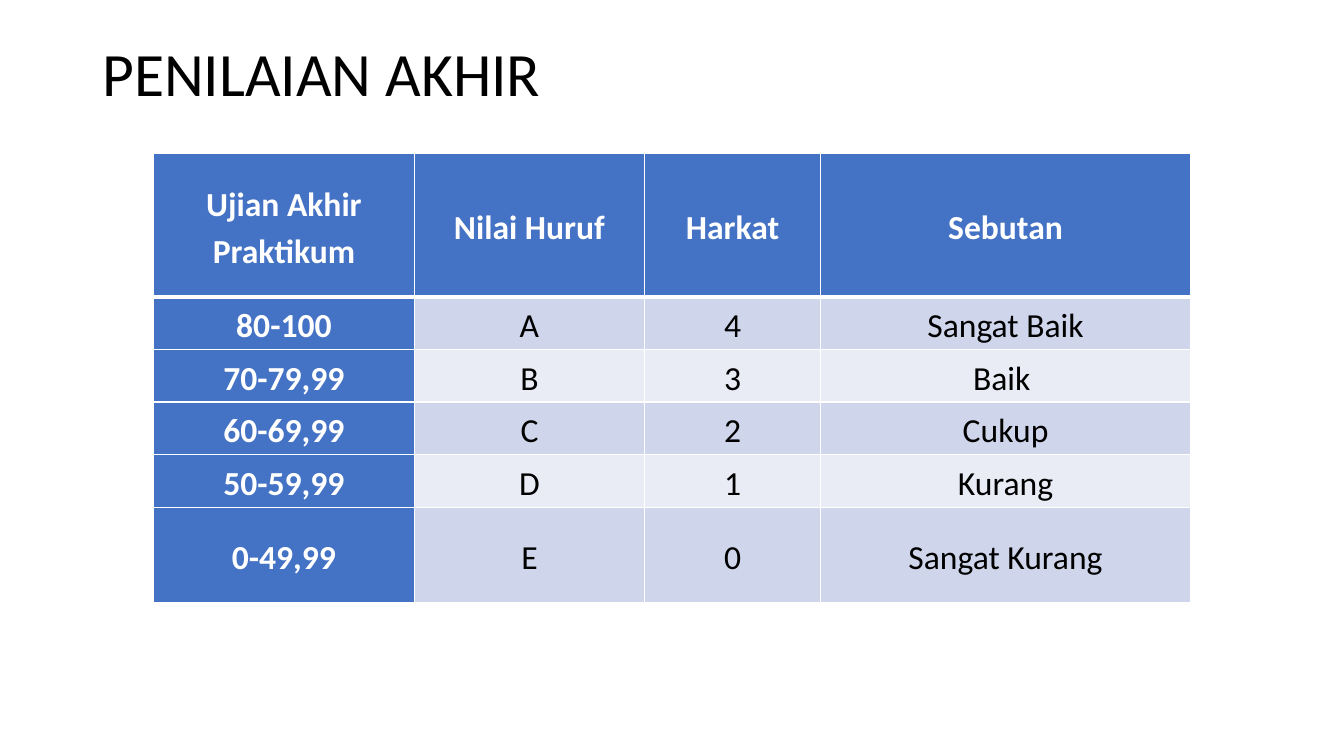
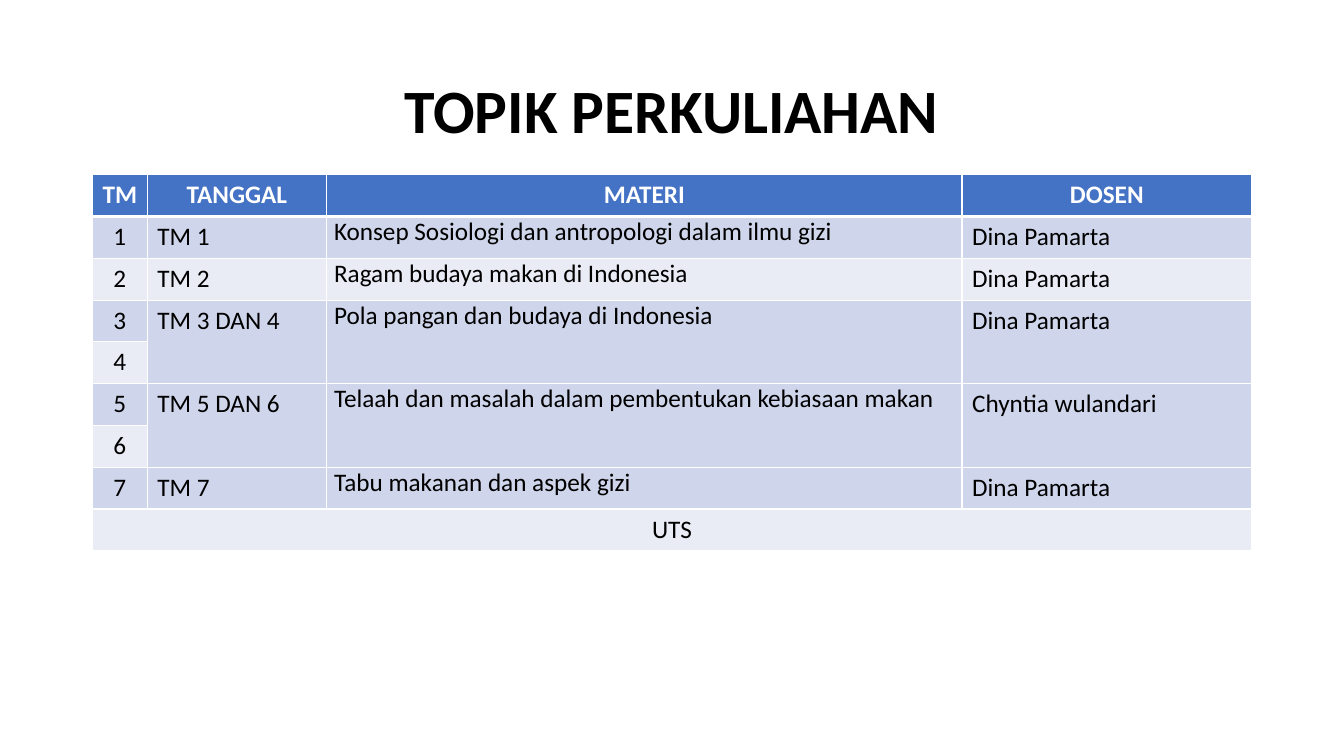
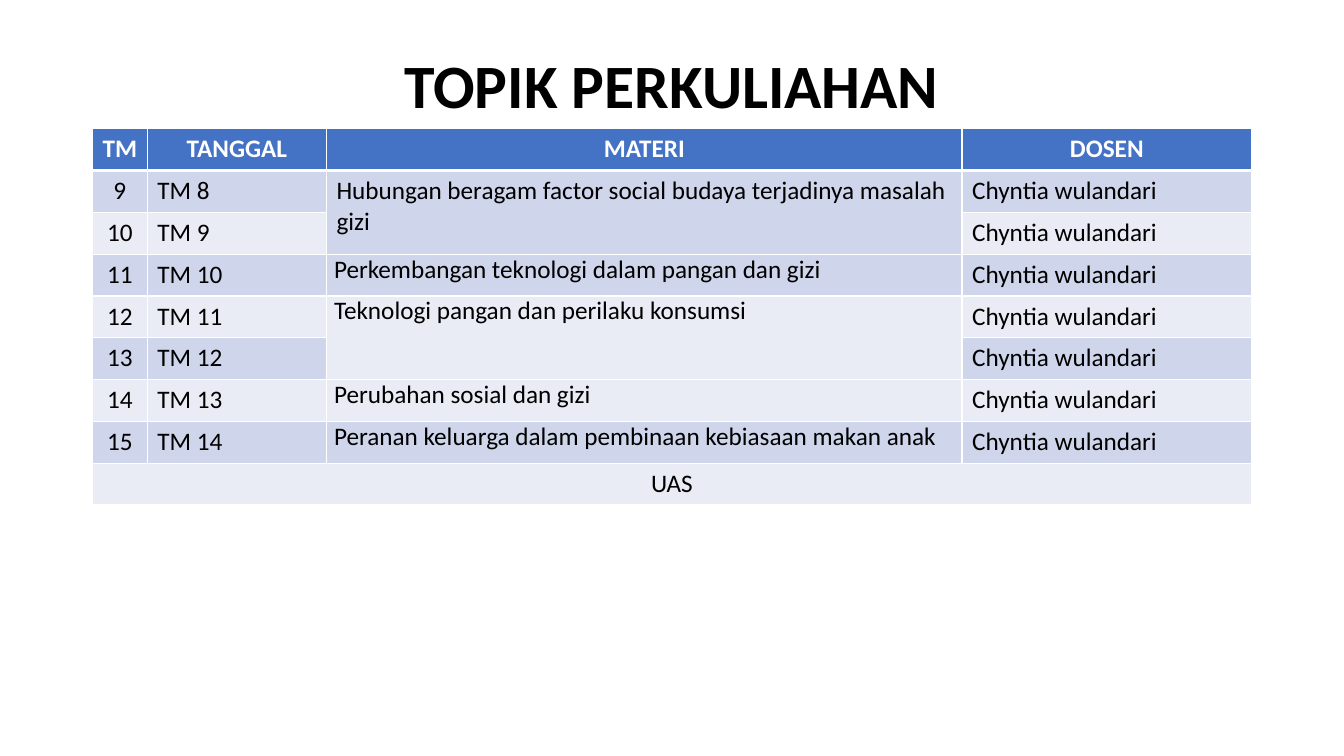
from dataclasses import dataclass
from typing import Optional

from lxml.etree import SubElement
from pptx import Presentation
from pptx.dml.color import RGBColor
from pptx.enum.text import MSO_ANCHOR, PP_ALIGN
from pptx.oxml.ns import qn
from pptx.util import Pt

FONT = "Calibri"
BLACK = "000000"
WHITE = "FFFFFF"
BLUE = "4472C4"
BANDS = ("CFD5EA", "E9EBF5")
BLANK_LAYOUT = 6

Row = tuple[Optional[str], ...]


@dataclass(frozen=True)
class TableStyle:
    column_widths: tuple[float, ...]
    alignments: tuple[PP_ALIGN, ...]
    tight_columns: tuple[int, ...]
    font_size: float
    line_spacing: float
    anchor: MSO_ANCHOR
    header_column: bool


@dataclass(frozen=True)
class TableSlide:
    """A title over a table; a None cell joins the cell above, a lone cell fills its row."""
    title: str
    title_top: float
    title_alignment: PP_ALIGN
    title_bold: bool
    table_left: float
    table_top: float
    row_heights: tuple[float, ...]
    style: TableStyle
    rows: tuple[Row, ...]
    roomy_cells: tuple[tuple[int, int], ...] = ()


GRADE_STYLE = TableStyle(
    column_widths=(186.5, 164.2, 126, 264),
    alignments=(PP_ALIGN.CENTER,) * 4,
    tight_columns=(0, 1, 2, 3),
    font_size=24,
    line_spacing=1.15,
    anchor=MSO_ANCHOR.MIDDLE,
    header_column=True,
)
TOPIC_STYLE = TableStyle(
    column_widths=(39.24, 128, 454, 206.76),
    alignments=(PP_ALIGN.CENTER, PP_ALIGN.LEFT, PP_ALIGN.LEFT, PP_ALIGN.LEFT),
    tight_columns=(2,),
    font_size=18,
    line_spacing=1,
    anchor=MSO_ANCHOR.TOP,
    header_column=False,
)
TOPIC_HEADER = ("TM", "TANGGAL", "MATERI", "DOSEN")
TOPIC_ROW_HEIGHTS = (29.85,) * 9
DINA = "Dina Pamarta"
CHYNTIA = "Chyntia wulandari"

SLIDES = (
    TableSlide(
        "PENILAIAN AKHIR", 2.4, PP_ALIGN.LEFT, False, 109.6, 109.6,
        (102.4, 37.6, 37.6, 37.6, 37.6, 68.4), GRADE_STYLE,
        (
            ("Ujian Akhir Praktikum", "Nilai Huruf", "Harkat", "Sebutan"),
            ("80-100", "A", "4", "Sangat Baik"),
            ("70-79,99", "B", "3", "Baik "),
            ("60-69,99", "C", "2", "Cukup"),
            ("50-59,99", "D", "1", "Kurang"),
            ("0-49,99", "E", "0", "Sangat Kurang"),
        ),
    ),
    TableSlide(
        "TOPIK PERKULIAHAN", 28.6, PP_ALIGN.CENTER, True, 66, 124.8,
        TOPIC_ROW_HEIGHTS, TOPIC_STYLE,
        (
            TOPIC_HEADER,
            ("1", "TM 1", "Konsep Sosiologi dan antropologi dalam ilmu gizi", DINA),
            ("2", "TM 2", "Ragam budaya makan di Indonesia", DINA),
            ("3", "TM 3 DAN 4", "Pola pangan dan budaya di Indonesia", DINA),
            ("4", None, None, None),
            ("5", "TM 5 DAN 6", "Telaah dan masalah dalam pembentukan kebiasaan makan", CHYNTIA),
            ("6", None, None, None),
            ("7", "TM 7", "Tabu makanan dan aspek gizi", DINA),
            ("UTS",),
        ),
    ),
    TableSlide(
        "TOPIK PERKULIAHAN", 11.2, PP_ALIGN.CENTER, True, 66, 92,
        TOPIC_ROW_HEIGHTS, TOPIC_STYLE,
        (
            TOPIC_HEADER,
            ("9", "TM 8", "Hubungan beragam factor social budaya terjadinya masalah gizi", CHYNTIA),
            ("10", "TM 9", None, CHYNTIA),
            ("11", "TM 10", "Perkembangan teknologi dalam pangan dan gizi", CHYNTIA),
            ("12", "TM 11", "Teknologi pangan dan perilaku konsumsi", CHYNTIA),
            ("13", "TM 12", None, CHYNTIA),
            ("14", "TM 13", "Perubahan sosial dan gizi", CHYNTIA),
            ("15", "TM 14", "Peranan keluarga dalam pembinaan kebiasaan makan anak", CHYNTIA),
            ("UAS",),
        ),
        roomy_cells=((1, 2),),
    ),
)


def color(value: str) -> RGBColor:
    return RGBColor.from_string(value)


def write(paragraph, text: str, size: float, text_color: str, bold: bool,
          alignment: PP_ALIGN, line_spacing: float) -> None:
    paragraph.alignment = alignment
    paragraph.line_spacing = line_spacing
    run = paragraph.add_run()
    run.text = text
    run.font.name = FONT
    run.font.size = Pt(size)
    run.font.bold = bold
    run.font.color.rgb = color(text_color)


def add_title(slide, content: TableSlide) -> None:
    box = slide.shapes.add_textbox(Pt(66), Pt(content.title_top), Pt(828), Pt(104.4))
    frame = box.text_frame
    frame.word_wrap = True
    frame.vertical_anchor = MSO_ANCHOR.MIDDLE
    write(frame.paragraphs[0], content.title, 44, BLACK, content.title_bold,
          content.title_alignment, 0.9)


def set_borders(cell, row_index: int) -> None:
    """White lines, with a thicker one under the header row."""
    widths = {"lnL": 1, "lnR": 1,
              "lnT": 3 if row_index == 1 else 1,
              "lnB": 3 if row_index == 0 else 1}
    properties = cell._tc.get_or_add_tcPr()
    for tag, width in widths.items():
        line = SubElement(properties, qn(f"a:{tag}"), w=str(Pt(width)))
        fill = SubElement(line, qn("a:solidFill"))
        SubElement(fill, qn("a:srgbClr"), val=WHITE)


def merge_cells(table, rows: tuple[Row, ...]) -> None:
    last_column = len(table.columns) - 1
    for row_index, row in enumerate(rows):
        if len(row) == 1:
            table.cell(row_index, 0).merge(table.cell(row_index, last_column))
        for column_index, text in enumerate(row):
            if text is None:
                above = table.cell(row_index - 1, column_index)
                above.merge(table.cell(row_index, column_index))


def add_table(slide, content: TableSlide) -> None:
    style = content.style
    table = slide.shapes.add_table(
        len(content.rows), len(style.column_widths),
        Pt(content.table_left), Pt(content.table_top),
        Pt(sum(style.column_widths)), Pt(sum(content.row_heights))).table
    table.first_row = table.horz_banding = False
    for column, width in zip(table.columns, style.column_widths):
        column.width = Pt(width)
    for row_index, (table_row, height) in enumerate(zip(table.rows, content.row_heights)):
        table_row.height = Pt(height)
        texts = content.rows[row_index]
        for column_index, cell in enumerate(table_row.cells):
            is_header = row_index == 0 or (style.header_column and column_index == 0)
            set_borders(cell, row_index)
            cell.fill.solid()
            cell.fill.fore_color.rgb = color(BLUE if is_header else BANDS[(row_index - 1) % 2])
            cell.vertical_anchor = style.anchor
            is_tight = (column_index in style.tight_columns
                        and (row_index > 0 or style.header_column)
                        and (row_index, column_index) not in content.roomy_cells)
            if is_tight:
                cell.margin_left = cell.margin_right = Pt(5.4)
                cell.margin_top = cell.margin_bottom = Pt(0)
            text = texts[column_index] if column_index < len(texts) else None
            if text is not None:
                alignment = PP_ALIGN.CENTER if row_index == 0 else style.alignments[column_index]
                write(cell.text_frame.paragraphs[0], text, style.font_size,
                      WHITE if is_header else BLACK, is_header, alignment, style.line_spacing)
    merge_cells(table, content.rows)


def main() -> None:
    presentation = Presentation()
    presentation.slide_width = Pt(960)
    presentation.slide_height = Pt(540)
    for content in SLIDES:
        slide = presentation.slides.add_slide(presentation.slide_layouts[BLANK_LAYOUT])
        add_title(slide, content)
        add_table(slide, content)
    presentation.save("out.pptx")


if __name__ == "__main__":
    main()
